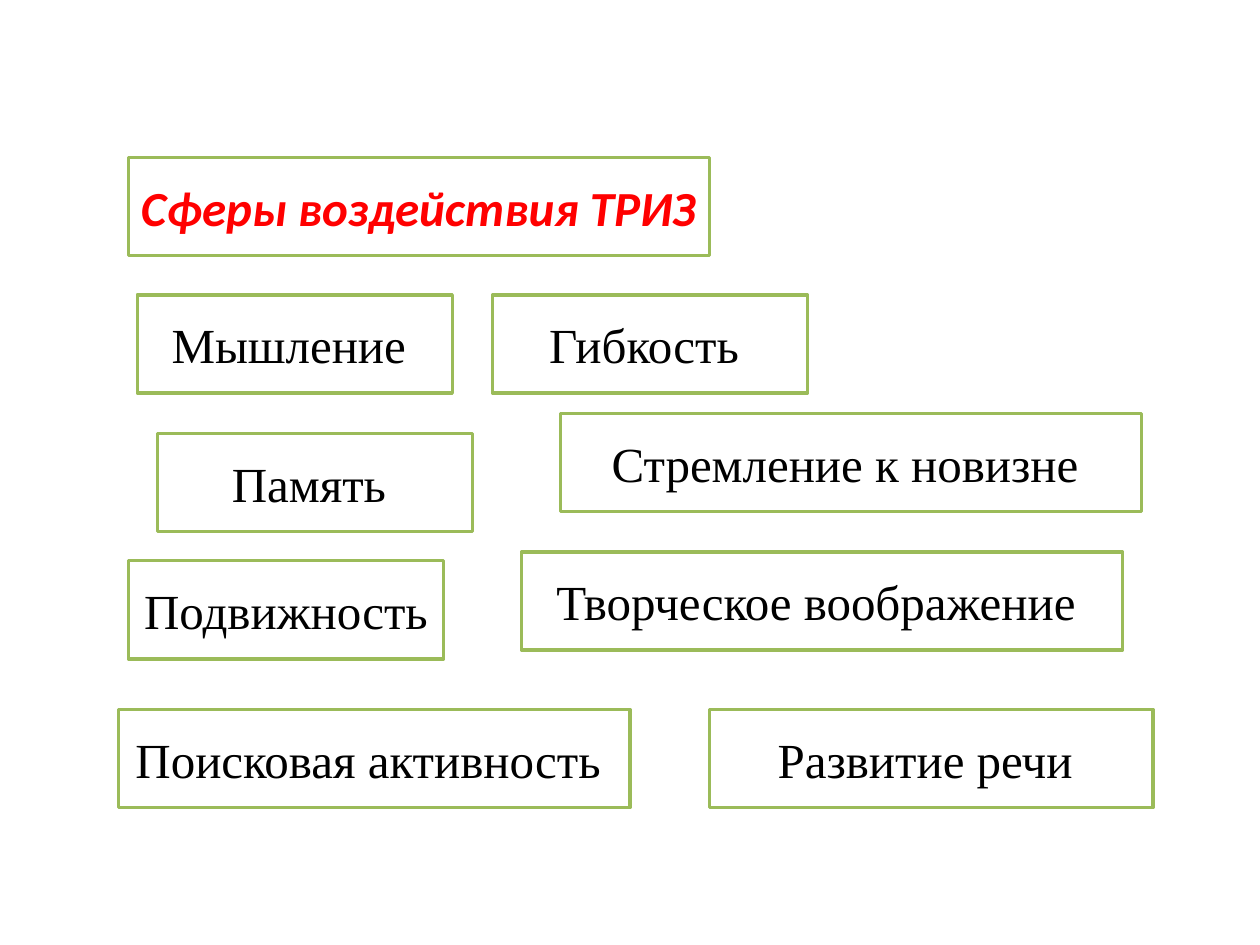
from dataclasses import dataclass

from pptx import Presentation
from pptx.dml.color import RGBColor
from pptx.enum.shapes import MSO_SHAPE
from pptx.enum.text import MSO_ANCHOR, PP_ALIGN
from pptx.util import Inches, Pt

RECTANGLE = MSO_SHAPE.RECTANGLE
MIDDLE = MSO_ANCHOR.MIDDLE
LEFT, CENTER = PP_ALIGN.LEFT, PP_ALIGN.CENTER

WHITE = RGBColor(0xFF, 0xFF, 0xFF)
BLACK = RGBColor(0x00, 0x00, 0x00)
RED = RGBColor(0xFF, 0x00, 0x00)
GREEN = RGBColor(0x9B, 0xBB, 0x59)

BOX_HEIGHT = 0.78
TITLE_FORMAT = {"name": "Calibri", "size": Pt(28), "bold": True, "italic": True}
SPHERE_FORMAT = {"name": "Times New Roman", "size": Pt(28)}


@dataclass
class Box:
    text: str
    left: float
    top: float
    width: float = 2.5


TITLE = Box("Сферы воздействия ТРИЗ", 1.02, 1.25, 4.61)
SPHERES = [
    Box("Мышление ", 1.09, 2.34),
    Box("Гибкость ", 3.91, 2.34),
    Box("Память ", 1.25, 3.44),
    Box("Подвижность ", 1.02, 4.45),
    Box("Поисковая активность ", 0.94, 5.63, 4.06),
    Box("Стремление к новизне ", 4.45, 3.28, 4.61),
    Box("Развитие речи ", 5.63, 5.63, 3.52),
    Box("Творческое воображение ", 4.14, 4.38, 4.77),
]


def draw_box(slide, box: Box, font_format: dict, color: RGBColor,
             alignment: PP_ALIGN) -> None:
    shape = slide.shapes.add_shape(
        RECTANGLE, Inches(box.left), Inches(box.top),
        Inches(box.width), Inches(BOX_HEIGHT))
    shape.shadow.inherit = False
    shape.fill.solid()
    shape.fill.fore_color.rgb = WHITE
    shape.line.color.rgb = GREEN
    shape.line.width = Pt(2)

    text_frame = shape.text_frame
    text_frame.word_wrap = True
    text_frame.vertical_anchor = MIDDLE
    paragraph = text_frame.paragraphs[0]
    paragraph.alignment = alignment
    run = paragraph.add_run()
    run.text = box.text
    run.font.color.rgb = color
    for attribute, value in font_format.items():
        setattr(run.font, attribute, value)


def main() -> None:
    presentation = Presentation()
    presentation.slide_width = Inches(10)
    presentation.slide_height = Inches(7.5)
    slide = presentation.slides.add_slide(presentation.slide_layouts[6])

    draw_box(slide, TITLE, TITLE_FORMAT, RED, LEFT)
    for sphere in SPHERES:
        draw_box(slide, sphere, SPHERE_FORMAT, BLACK, CENTER)

    presentation.save("out.pptx")


if __name__ == "__main__":
    main()
